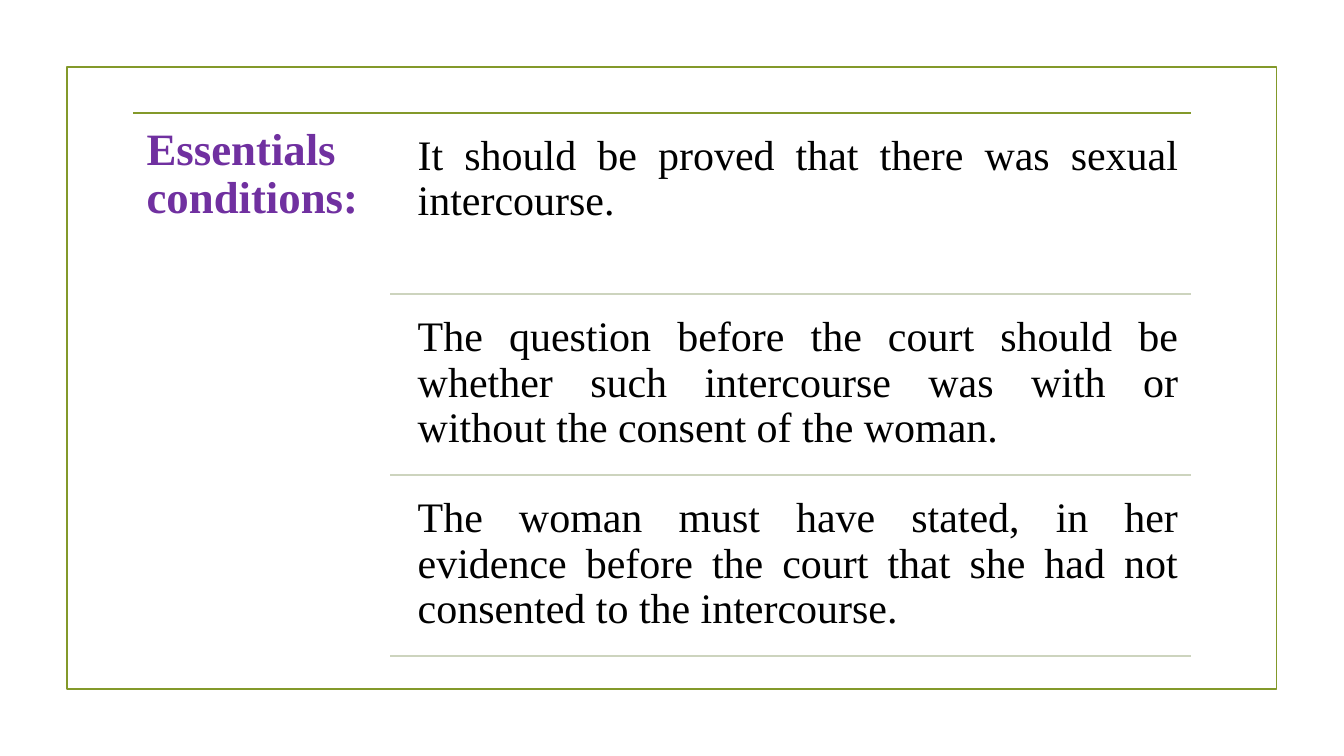
from lxml.etree import SubElement
from pptx import Presentation
from pptx.dml.color import RGBColor
from pptx.enum.shapes import MSO_CONNECTOR, MSO_SHAPE
from pptx.enum.text import MSO_ANCHOR, PP_ALIGN
from pptx.oxml.ns import qn
from pptx.util import Pt

OLIVE, PALE_OLIVE, PURPLE, BLACK = "83992A", "CDD4BE", "7030A0", "000000"
LEFT, RIGHT, TOP = 95.1, 851.1, 80.8
HEADING_WIDTH, HEADING_HEIGHT = 183.6, 393.6
ITEM_LEFT, ITEM_HEIGHT, ITEM_GAP = 289.4, 123.2, 6.15
CONDITIONS = [
    "It should be proved that there was sexual intercourse.",
    "The question before the court should be whether such intercourse was with "
    "or without the consent of the woman.",
    "The woman must have stated, in her evidence before the court that she had "
    "not consented to the intercourse.",
]


def add_rule(left, top, color):
    """Draw a horizontal line from left to the shared right edge."""
    rule = slide.shapes.add_connector(
        MSO_CONNECTOR.STRAIGHT, Pt(left), Pt(top), Pt(RIGHT), Pt(top))
    rule.line.color.rgb = RGBColor.from_string(color)
    rule.line.width = Pt(1.25)
    SubElement(rule._element.spPr, qn("a:effectLst"))


def add_text(text, left, top, width, height, inset, font_format, color):
    box = slide.shapes.add_textbox(Pt(left), Pt(top), Pt(width), Pt(height))
    frame = box.text_frame
    frame.word_wrap = True
    frame.vertical_anchor = MSO_ANCHOR.TOP
    for side in ("left", "top", "right", "bottom"):
        setattr(frame, f"margin_{side}", Pt(inset))
    paragraph = frame.paragraphs[0]
    paragraph.text = text
    paragraph.alignment = PP_ALIGN.JUSTIFY
    paragraph.line_spacing = 0.9
    for name, value in font_format.items():
        setattr(paragraph.font, name, value)
    paragraph.font.color.rgb = RGBColor.from_string(color)


presentation = Presentation()
presentation.slide_width, presentation.slide_height = Pt(960), Pt(540)
slide = presentation.slides.add_slide(presentation.slide_layouts[6])

border = slide.shapes.add_shape(
    MSO_SHAPE.RECTANGLE, Pt(47.8), Pt(48), Pt(864), Pt(444))
border.shadow.inherit = False
border.fill.background()
border.line.color.rgb = RGBColor.from_string(OLIVE)
border.line.width = Pt(1.25)

add_rule(LEFT, TOP, OLIVE)
heading_format = {"name": "Times New Roman", "size": Pt(32), "bold": True}
add_text("Essentials conditions:", LEFT, TOP, HEADING_WIDTH, HEADING_HEIGHT,
         9.6, heading_format, PURPLE)

item_format = {"name": "Times New Roman", "size": Pt(30), "bold": False}
for index, condition in enumerate(CONDITIONS):
    top = TOP + ITEM_GAP + index * (ITEM_HEIGHT + ITEM_GAP)
    add_text(condition, ITEM_LEFT, top, RIGHT - ITEM_LEFT, ITEM_HEIGHT,
             9, item_format, BLACK)
    add_rule(LEFT + HEADING_WIDTH, top + ITEM_HEIGHT, PALE_OLIVE)

presentation.save("out.pptx")
